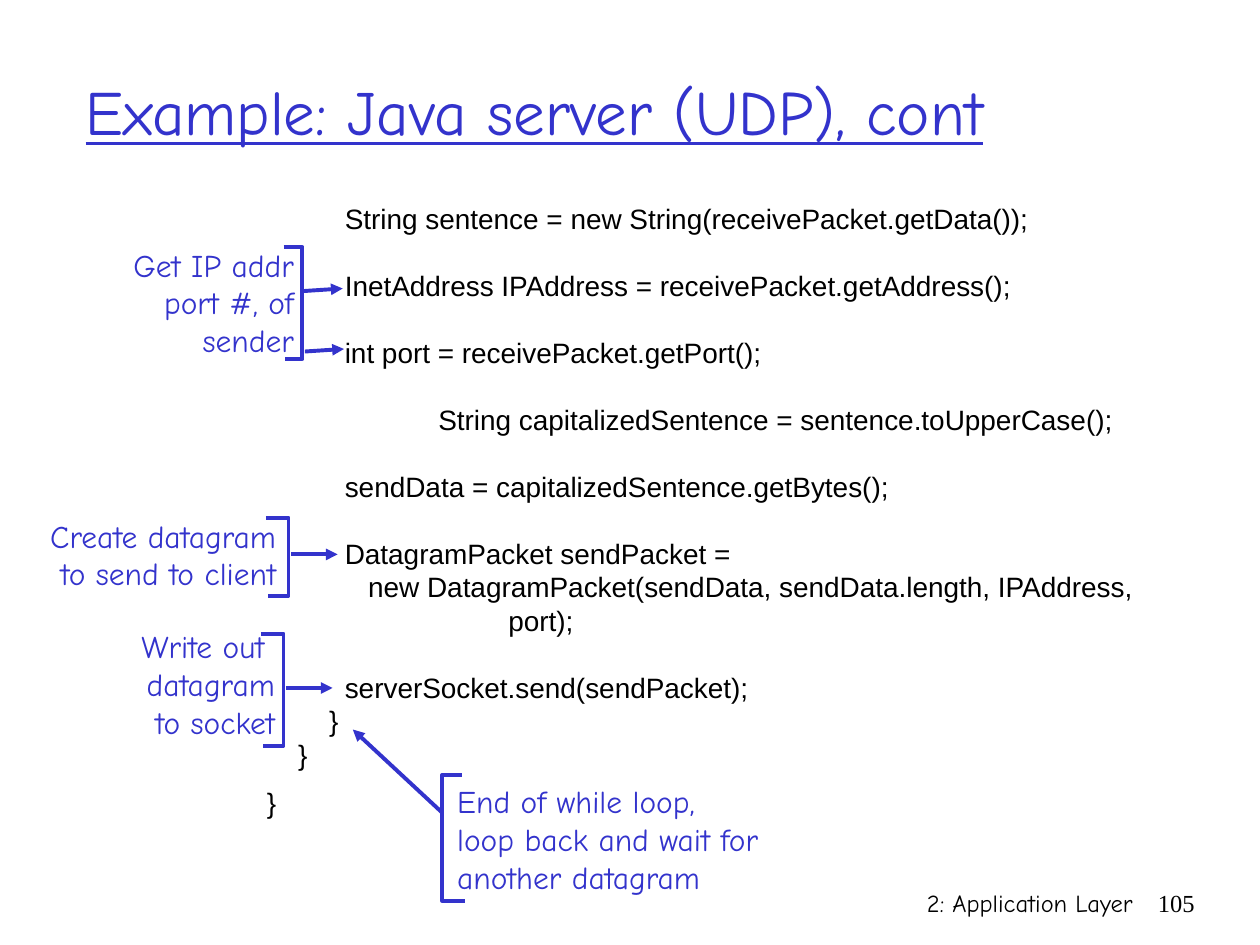
from dataclasses import dataclass

from lxml import etree
from pptx import Presentation
from pptx.dml.color import RGBColor
from pptx.enum import shapes, text
from pptx.oxml.ns import qn
from pptx.util import Inches, Pt

BLUE = RGBColor(0x33, 0x33, 0xCC)
BLACK = RGBColor(0x00, 0x00, 0x00)
COMIC, ARIAL, TIMES = "Comic Neue", "Arial", "Times New Roman"
LEFT, RIGHT = text.PP_ALIGN.LEFT, text.PP_ALIGN.RIGHT
TOP, MIDDLE = text.MSO_ANCHOR.TOP, text.MSO_ANCHOR.MIDDLE

LINE_PITCH = 19.15  # points between code lines
CHAR_INDENT = 4.45  # points for one column of code indent

Point = tuple[float, float]
Box = tuple[float, float, float, float]


@dataclass
class CodeLine:
    content: str
    columns: int = 10
    gap: float = 0


@dataclass
class Note:
    """A remark on the code, its bracket and the arrows to the lines it explains."""
    content: str
    box: Box
    bracket: list[Point]
    arrows: list[tuple[Point, Point]]
    align: text.PP_ALIGN = RIGHT


CODE = [
    CodeLine("String sentence = new String(receivePacket.getData());"),
    CodeLine("InetAddress IPAddress = receivePacket.getAddress();", gap=LINE_PITCH),
    CodeLine("int port = receivePacket.getPort();", gap=LINE_PITCH),
    CodeLine("String capitalizedSentence = sentence.toUpperCase();", 22, LINE_PITCH),
    CodeLine("sendData = capitalizedSentence.getBytes();", gap=LINE_PITCH),
    CodeLine("DatagramPacket sendPacket =", gap=LINE_PITCH),
    CodeLine("new DatagramPacket(sendData, sendData.length, IPAddress,", 13),
    CodeLine("port);", 31),
    CodeLine("serverSocket.send(sendPacket);", gap=LINE_PITCH),
    CodeLine("}", 8),
    CodeLine("}", 4),
    CodeLine("}", 0, 8.3),
]

NOTES = [
    Note("Get IP addr\nport #, of\nsender", (0.14, 1.9, 2.29, 1),
         [(2.25, 1.96), (2.4, 1.96), (2.4, 2.85), (2.26, 2.85)],
         [((2.41, 2.31), (2.72, 2.29)), ((2.42, 2.79), (2.73, 2.77))]),
    Note("Create datagram\nto send to client", (0.13, 4.05, 2.16, 0.7),
         [(2.11, 4.11), (2.29, 4.11), (2.29, 4.73), (2.13, 4.73)],
         [((2.31, 4.4), (2.68, 4.4))]),
    Note("Write out \ndatagram\nto socket", (0.84, 4.93, 1.44, 1),
         [(2.07, 5.03), (2.25, 5.03), (2.25, 5.92), (2.09, 5.92)],
         [((2.27, 5.46), (2.64, 5.46))]),
    Note("End of while loop,\nloop back and wait for\nanother datagram",
         (3.53, 6.16, 2.78, 1),
         [(3.69, 7.15), (3.51, 7.15), (3.51, 6.15), (3.67, 6.15)],
         [((3.51, 6.45), (2.8, 5.79))], LEFT),
]


def format_text(frame, font: str, size: float, color: RGBColor, align=LEFT) -> None:
    for paragraph in frame.paragraphs:
        paragraph.alignment = align
        for run in paragraph.runs:
            run.font.name = font
            run.font.size = Pt(size)
            run.font.color.rgb = color


def add_text(slide, content: str, box: Box, font: str, size: float,
             color: RGBColor, align=LEFT, anchor=TOP):
    frame = slide.shapes.add_textbox(*map(Inches, box)).text_frame
    frame.word_wrap = True
    frame.vertical_anchor = anchor
    frame.text = content
    format_text(frame, font, size, color, align)
    return frame


def add_title(slide, content: str) -> None:
    title = slide.shapes.title
    title.left, title.top, title.width, title.height = map(
        Inches, (0.58, 0.25, 8.5, 1.25))
    frame = title.text_frame
    frame.text = content
    frame.vertical_anchor = MIDDLE
    format_text(frame, COMIC, 36, BLUE)
    frame.paragraphs[0].runs[0].font.underline = True


def add_code(slide, lines: list[CodeLine]) -> None:
    frame = add_text(slide, "\n".join(line.content for line in lines),
                     (2.02, 1.55, 7.18, 5.04), ARIAL, 16, BLACK)
    for paragraph, line in zip(frame.paragraphs, lines):
        paragraph.line_spacing = Pt(LINE_PITCH)
        paragraph.space_before = Pt(line.gap)
        properties = paragraph._p.get_or_add_pPr()
        properties.set("marL", str(Pt(line.columns * CHAR_INDENT)))
        properties.set("indent", "0")


def style_line(line) -> None:
    line.color.rgb = BLUE
    line.width = Pt(2.25)


def add_bracket(slide, points: list[Point]) -> None:
    corners = [(Inches(x), Inches(y)) for x, y in points]
    builder = slide.shapes.build_freeform(*corners[0])
    builder.add_line_segments(corners[1:], close=False)
    bracket = builder.convert_to_shape()
    bracket.shadow.inherit = False
    bracket.fill.background()
    style_line(bracket.line)


def add_arrow(slide, start: Point, end: Point) -> None:
    arrow = slide.shapes.add_connector(
        shapes.MSO_CONNECTOR.STRAIGHT, *map(Inches, start + end))
    style_line(arrow.line)
    etree.SubElement(arrow.line._get_or_add_ln(), qn("a:tailEnd"), type="triangle")
    etree.SubElement(arrow._element.spPr, qn("a:effectLst"))


def add_note(slide, note: Note) -> None:
    frame = add_text(slide, note.content, note.box, COMIC, 18, BLUE,
                     note.align, MIDDLE)
    # The ragged side needs no inset
    if note.align == RIGHT:
        frame.margin_left = 0
    else:
        frame.margin_right = 0
    add_bracket(slide, note.bracket)
    for start, end in note.arrows:
        add_arrow(slide, start, end)


def main() -> None:
    deck = Presentation()
    deck.slide_width, deck.slide_height = Inches(10), Inches(7.5)
    slide = deck.slides.add_slide(deck.slide_layouts[5])
    add_text(slide, "2: Application Layer", (5.92, 7, 3.17, 0.5),
             COMIC, 14, BLACK, RIGHT)
    add_text(slide, "105", (9.08, 7, 0.5, 0.5), TIMES, 14, BLACK, RIGHT)
    add_title(slide, "Example: Java server (UDP), cont")
    add_code(slide, CODE)
    for note in NOTES:
        add_note(slide, note)
    deck.save("out.pptx")


if __name__ == "__main__":
    main()
